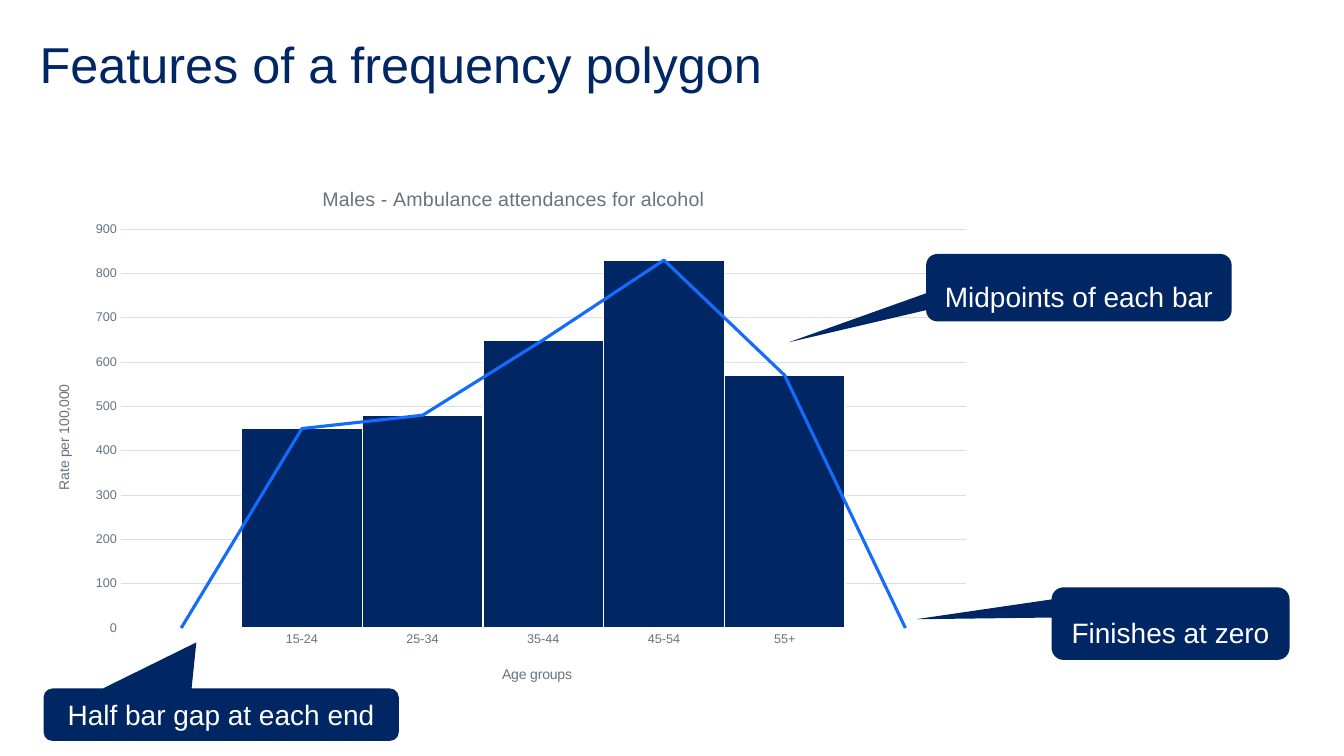
from lxml import etree
from pptx import Presentation
from pptx.chart.data import CategoryChartData
from pptx.dml.color import RGBColor
from pptx.enum.chart import XL_CHART_TYPE, XL_MARKER_STYLE, XL_TICK_MARK
from pptx.enum.shapes import MSO_SHAPE
from pptx.enum.text import MSO_ANCHOR, PP_ALIGN
from pptx.oxml import parse_xml
from pptx.oxml.ns import nsdecls, qn
from pptx.util import Cm, Pt

# Content
HEADING = "Features of a frequency polygon"
CHART_TITLE = "Males - Ambulance attendances for alcohol"
AGE_TITLE = "Age groups"
RATE_TITLE = "Rate per 100,000"
RATES = [("", 0), ("15-24", 450), ("25-34", 480), ("35-44", 650),
         ("45-54", 830), ("55+", 570), ("", 0)]
# text, (left, top, width, height) in cm, pointer offset, line spacing
CALLOUTS = [
    ("Half bar gap at each end", (1.1, 17.35, 8.95, 1.32), (-0.07, -1.38), 1.0),
    ("Midpoints of each bar", (23.34, 6.4, 7.7, 1.7), (-0.95, 0.81), 1.5),
    ("Finishes at zero", (26.5, 14.8, 6.0, 1.83), (-1.07, -0.06), 1.5),
]
CHART_BOX = (0.84, 4.06, 23.98, 13.59)
FONT = "Arial"
NAVY, BLUE, WHITE = "002664", "146CFD", "FFFFFF"
GREY, GRID = "657480", "DBDFE2"


def rgb(value):
    return RGBColor.from_string(value)


def style_font(font, size, color):
    font.name, font.size, font.bold = FONT, Pt(size), False
    font.color.rgb = rgb(color)


def style_line(line, color, width):
    line.color.rgb = rgb(color)
    line.width = Pt(width)


def add_run(paragraph, text, size, color):
    run = paragraph.add_run()
    run.text = text
    style_font(run.font, size, color)


def set_layout(element, index, **fractions):
    """Place a chart part by fractions of the chart area."""
    for old in element.findall(qn("c:layout")):
        element.remove(old)
    layout = parse_xml(f'<c:layout {nsdecls("c")}><c:manualLayout/></c:layout>')
    if "w" in fractions:
        etree.SubElement(layout[0], qn("c:layoutTarget")).set("val", "inner")
    for side in "xy":
        etree.SubElement(layout[0], qn(f"c:{side}Mode")).set("val", "edge")
    for side, fraction in fractions.items():
        etree.SubElement(layout[0], qn(f"c:{side}")).set("val", str(fraction))
    element.insert(index, layout)


def add_chart_text(title, text, size, x, y):
    add_run(title.text_frame.paragraphs[0], text, size, GREY)
    set_layout(title._element, 1, x=x, y=y)


def style_axis(axis):
    axis.major_tick_mark = axis.minor_tick_mark = XL_TICK_MARK.NONE
    style_font(axis.tick_labels.font, 9, GREY)


presentation = Presentation()
presentation.slide_width, presentation.slide_height = Cm(33.87), Cm(19.05)
slide = presentation.slides.add_slide(presentation.slide_layouts[5])

# Heading
heading = slide.shapes.title
heading.left, heading.top, heading.width, heading.height = map(Cm, (1, 1, 31.9, 1.52))
frame = heading.text_frame
frame.margin_left = frame.margin_right = frame.margin_top = frame.margin_bottom = 0
frame.vertical_anchor = MSO_ANCHOR.TOP
frame.paragraphs[0].alignment = PP_ALIGN.LEFT
frame.paragraphs[0].line_spacing = 0.9
add_run(frame.paragraphs[0], HEADING, 36, NAVY)

# Histogram with frequency polygon
data = CategoryChartData()
data.categories = [age for age, _ in RATES]
for series_name in ("Series 1", "Series 2"):
    data.add_series(series_name, [rate for _, rate in RATES])
chart = slide.shapes.add_chart(
    XL_CHART_TYPE.COLUMN_CLUSTERED, *map(Cm, CHART_BOX), data).chart
chart.has_legend = False
style_font(chart.font, 10, GREY)
chart.has_title = True
add_chart_text(chart.chart_title, CHART_TITLE, 14, 0.3, 0.04)

ages, rates = chart.category_axis, chart.value_axis
for axis in (ages, rates):
    style_axis(axis)
style_line(ages.format.line, GRID, 0.75)
rates.format.line.fill.background()
style_line(rates.major_gridlines.format.line, GRID, 0.75)
rates.minimum_scale, rates.maximum_scale, rates.major_unit = 0, 900, 100
add_chart_text(ages.axis_title, AGE_TITLE, 10, 0.49, 0.93)
add_chart_text(rates.axis_title, RATE_TITLE, 10, 0.02, 0.41)

# Move the second series to a line plot on the same axes
bars = chart.plots[0]
bars.vary_by_categories = False
bars.gap_width = 0
bar_plot = bars._element
line_plot = parse_xml(
    f'<c:lineChart {nsdecls("c")}><c:grouping val="standard"/>'
    '<c:varyColors val="0"/><c:marker val="1"/></c:lineChart>')
polygon_series = bar_plot.findall(qn("c:ser"))[1]
for bar_setting in polygon_series.findall(qn("c:invertIfNegative")):
    polygon_series.remove(bar_setting)
line_plot.insert(2, polygon_series)
for axis_id in bar_plot.findall(qn("c:axId")):
    etree.SubElement(line_plot, qn("c:axId")).set("val", axis_id.get("val"))
bar_plot.addnext(line_plot)
set_layout(bar_plot.getparent(), 0, x=0.092, y=0.126, w=0.888, h=0.74)

histogram, polygon = bars.series[0], chart.plots[1].series[0]
histogram.format.fill.solid()
histogram.format.fill.fore_color.rgb = rgb(NAVY)
style_line(histogram.format.line, WHITE, 1)
style_line(polygon.format.line, BLUE, 2.25)
polygon.marker.style = XL_MARKER_STYLE.NONE
polygon.smooth = False

# Callouts
for text, box, pointer, spacing in CALLOUTS:
    callout = slide.shapes.add_shape(
        MSO_SHAPE.ROUNDED_RECTANGULAR_CALLOUT, *map(Cm, box))
    callout.adjustments[0], callout.adjustments[1] = pointer
    callout.shadow.inherit = False
    callout.fill.solid()
    callout.fill.fore_color.rgb = rgb(NAVY)
    callout.line.fill.background()
    callout.text_frame.vertical_anchor = MSO_ANCHOR.MIDDLE
    paragraph = callout.text_frame.paragraphs[0]
    paragraph.alignment = PP_ALIGN.CENTER
    paragraph.line_spacing = spacing
    add_run(paragraph, text, 20, WHITE)

presentation.save("out.pptx")
